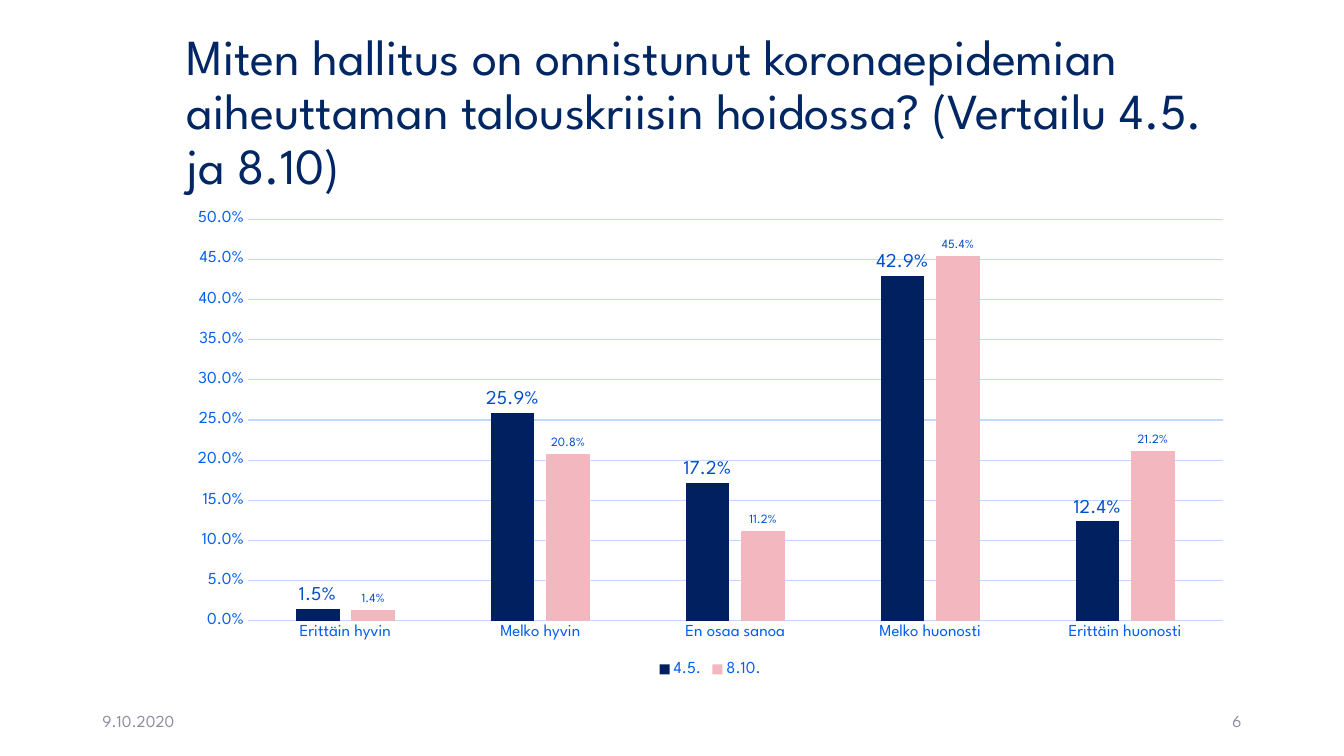
from dataclasses import dataclass

from lxml.etree import SubElement
from pptx import Presentation
from pptx.chart.data import CategoryChartData
from pptx.dml.color import RGBColor
from pptx.enum.chart import XL_CHART_TYPE, XL_LABEL_POSITION, XL_LEGEND_POSITION, XL_TICK_MARK
from pptx.enum.text import MSO_ANCHOR, PP_ALIGN
from pptx.oxml.ns import qn
from pptx.util import Cm, Pt


@dataclass(frozen=True)
class Theme:
    font: str = "League Spartan"
    title: str = "002663"
    footer: str = "8C8E9F"
    axis: str = "005DF3"
    label: str = "004DCA"
    grid: str = "C1D9FF"
    title_size: float = 36
    small_size: float = 12
    chart_size: float = 10
    line_width: float = 0.75


@dataclass(frozen=True)
class TextItem:
    text: str
    left: float
    top: float
    width: float
    height: float
    size: float
    color: str
    align: PP_ALIGN = PP_ALIGN.LEFT
    spacing: float = 1.0


@dataclass(frozen=True)
class Survey:
    date: str
    shares: tuple[float, ...]
    color: str
    label_size: float


THEME = Theme()
PERCENT = "0.0%"
TEXTS = (
    TextItem("Miten hallitus on onnistunut koronaepidemian aiheuttaman talouskriisin "
             "hoidossa? (Vertailu 4.5. ja 8.10)",
             4.45, 1.02, 26.9, 3.68, THEME.title_size, THEME.title, spacing=0.9),
    TextItem("9.10.2020", 2.33, 17.65, 7.62, 1.01, THEME.small_size, THEME.footer),
    TextItem("6", 23.92, 17.65, 7.62, 1.01, THEME.small_size, THEME.footer, PP_ALIGN.RIGHT),
)
ANSWERS = ("Erittäin hyvin", "Melko hyvin", "En osaa sanoa", "Melko huonosti", "Erittäin huonosti")
SURVEYS = (
    Survey("4.5.", (0.015, 0.259, 0.172, 0.429, 0.124), "002060", 14),
    Survey("8.10.", (0.014, 0.208, 0.112, 0.454, 0.212), "F2B7BF", 9),
)


def set_font(font, size: float, color: str) -> None:
    font.name = THEME.font
    font.size = Pt(size)
    font.color.rgb = RGBColor.from_string(color)


def set_line(line) -> None:
    line.color.rgb = RGBColor.from_string(THEME.grid)
    line.width = Pt(THEME.line_width)


def add_text(slide, item: TextItem) -> None:
    s = slide.shapes.add_textbox(Cm(item.left), Cm(item.top), Cm(item.width), Cm(item.height))
    tf = s.text_frame
    tf.word_wrap = True
    tf.vertical_anchor = MSO_ANCHOR.MIDDLE
    p = tf.paragraphs[0]
    p.text = item.text
    p.alignment = item.align
    p.line_spacing = item.spacing
    set_font(p.font, item.size, item.color)


def style_axes(chart) -> None:
    for axis in (chart.category_axis, chart.value_axis):
        axis.major_tick_mark = axis.minor_tick_mark = XL_TICK_MARK.NONE
        set_font(axis.tick_labels.font, THEME.small_size, THEME.axis)
    set_line(chart.category_axis.format.line)

    shares = chart.value_axis
    shares.minimum_scale, shares.maximum_scale, shares.major_unit = 0, 0.5, 0.05
    shares.tick_labels.number_format = PERCENT
    shares.tick_labels.number_format_is_linked = False
    shares.format.line.fill.background()
    set_line(shares.major_gridlines.format.line)


def style_series(series, survey: Survey) -> None:
    series.format.fill.solid()
    series.format.fill.fore_color.rgb = RGBColor.from_string(survey.color)
    series.invert_if_negative = False
    labels = series.data_labels
    labels.show_value = True
    labels.position = XL_LABEL_POSITION.OUTSIDE_END
    labels.number_format = PERCENT
    labels.number_format_is_linked = False
    set_font(labels.font, survey.label_size, THEME.label)


def add_survey_chart(slide) -> None:
    data = CategoryChartData(number_format=PERCENT)
    data.categories = ANSWERS
    for survey in SURVEYS:
        data.add_series(survey.date, survey.shares)
    chart = slide.shapes.add_chart(XL_CHART_TYPE.COLUMN_CLUSTERED,
                                   Cm(4.45), Cm(5.08), Cm(26.9), Cm(12.09), data).chart
    set_font(chart.font, THEME.chart_size, THEME.title)
    chart.has_title = False
    style_axes(chart)

    # Bars and their labels
    plot = chart.plots[0]
    plot.gap_width, plot.overlap = 219, -27
    plot.vary_by_categories = False
    for series, survey in zip(plot.series, SURVEYS):
        style_series(series, survey)

    # Legend below the plot
    chart.has_legend = True
    chart.legend.position = XL_LEGEND_POSITION.BOTTOM
    chart.legend.include_in_layout = False
    set_font(chart.legend.font, THEME.small_size, THEME.axis)


def main() -> None:
    prs = Presentation()
    prs.slide_width, prs.slide_height = Cm(33.87), Cm(19.05)
    slide = prs.slides.add_slide(prs.slide_layouts[6])

    # Title and footer
    for item in TEXTS:
        add_text(slide, item)

    # Comparison of the two surveys
    add_survey_chart(slide)
    prs.save("out.pptx")


if __name__ == "__main__":
    main()
